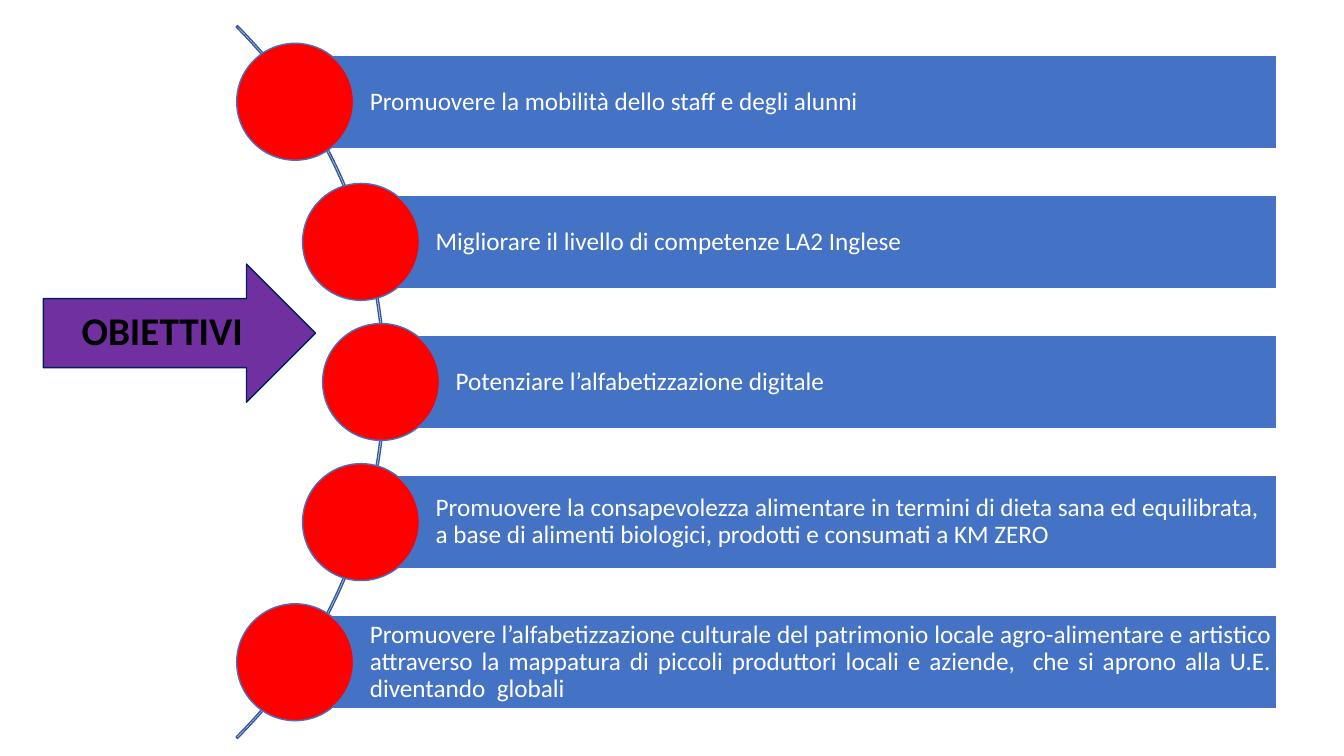
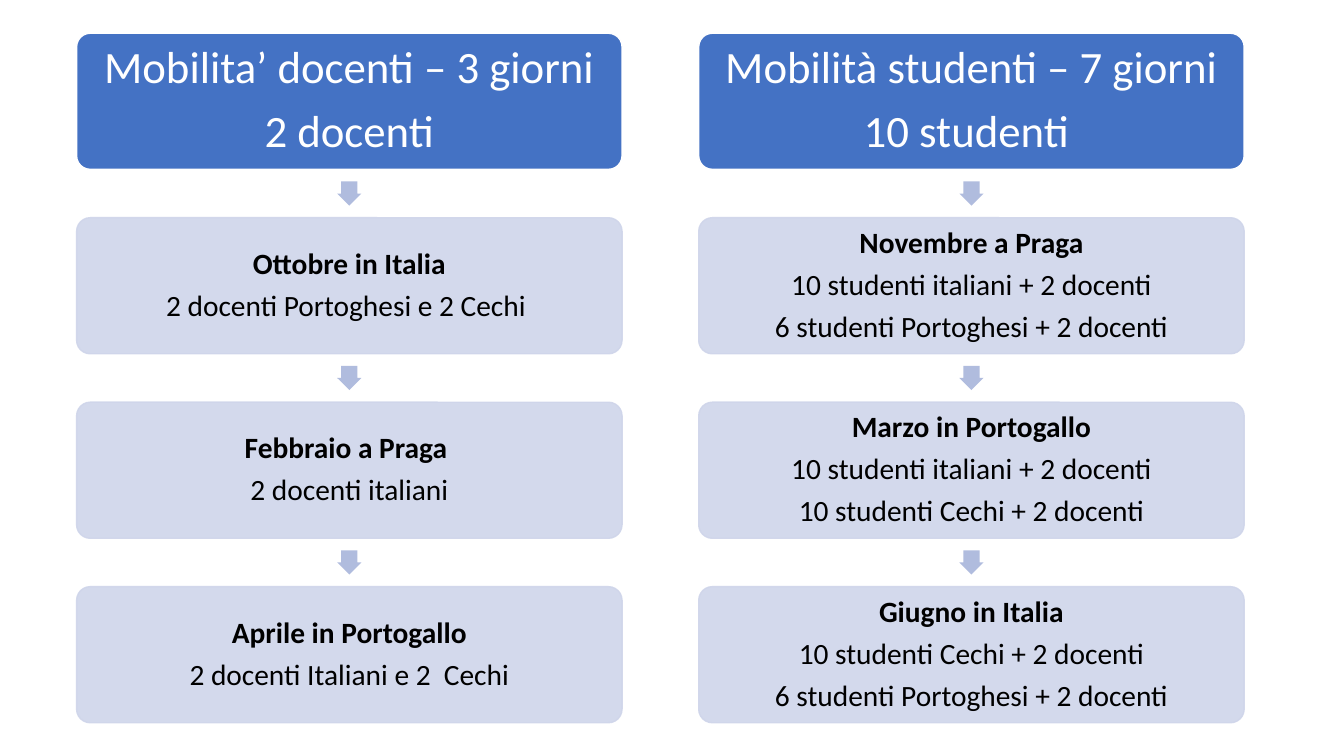
from math import sqrt

from lxml import etree
from pptx import Presentation
from pptx.dml import color as dml
from pptx.enum import shapes, text
from pptx.oxml import ns
from pptx.util import Inches, Pt

# Shared look
FONT = "Calibri"
BLUE, WHITE, BLACK = "4472C4", "FFFFFF", "000000"
RED, PURPLE, NAVY, ARC_BLUE = "FF0000", "7030A0", "002060", "365B9D"
PALE, ARROW_BLUE = "CFD5EA", "B0BCDE"
CENTER, LEFT, JUSTIFY = text.PP_ALIGN.CENTER, text.PP_ALIGN.LEFT, text.PP_ALIGN.JUSTIFY
KIND = shapes.MSO_SHAPE
WIDTH, HEIGHT = 13.33, 7.5
rgb = dml.RGBColor.from_string


def draw(slide, kind, box, fill=None, line=None, adjustments=(), opacity=100):
    shape = slide.shapes.add_shape(kind, *[Inches(length) for length in box])
    shape.shadow.inherit = False
    for index, value in enumerate(adjustments):
        shape.adjustments[index] = value
    for paint, colour in ((shape.fill, fill), (shape.line.fill, line)):
        if colour:
            paint.solid()
            paint.fore_color.rgb = rgb(colour)
        else:
            paint.background()
    if line:
        shape.line.width = Pt(1)
    if opacity < 100:
        for tag in shape.element.spPr.iter(ns.qn("a:srgbClr")):
            etree.SubElement(tag, ns.qn("a:alpha"), val=str(opacity * 1000))
    return shape


def write(shape, lines, size, colour, align=CENTER, bold_first=False, inset=0.03, left=None):
    frame = shape.text_frame
    frame.word_wrap = True
    frame.auto_size = text.MSO_AUTO_SIZE.NONE
    frame.vertical_anchor = text.MSO_ANCHOR.MIDDLE
    frame.margin_top = frame.margin_right = frame.margin_bottom = Inches(inset)
    frame.margin_left = Inches(inset if left is None else left)
    for index, line in enumerate(lines):
        paragraph = frame.paragraphs[0] if index == 0 else frame.add_paragraph()
        paragraph.alignment = align
        paragraph.line_spacing = 0.9
        paragraph.space_after = Pt(size * 0.35)
        run = paragraph.add_run()
        run.text = line
        run.font.name = FONT
        run.font.size = Pt(size)
        run.font.bold = bold_first and index == 0
        run.font.color.rgb = rgb(colour)


presentation = Presentation()
presentation.slide_width, presentation.slide_height = Inches(WIDTH), Inches(HEIGHT)
TITLE_ONLY, BLANK = presentation.slide_layouts[5], presentation.slide_layouts[6]

# Slide 1: goals along an arc
slide = presentation.slides.add_slide(TITLE_ONLY)
goals = [
    ("Promuovere la mobilità dello staff e degli alunni", LEFT),
    ("Migliorare il livello di competenze LA2 Inglese", LEFT),
    ("Potenziare l’alfabetizzazione digitale", LEFT),
    ("Promuovere la consapevolezza alimentare in termini di dieta sana ed equilibrata, "
     "a base di alimenti biologici, prodotti e consumati a KM ZERO", LEFT),
    ("Promuovere l’alfabetizzazione culturale del patrimonio locale agro-alimentare e "
     "artistico attraverso la mappatura di piccoli produttori locali e aziende,  che si "
     "aprono alla U.E. diventando  globali", JUSTIFY),
]
arc_x, arc_y, arc_radius = -1.18, 3.79, 5
centre_radius, goal_pitch = 4.96, 1.39
disc = 1.16
bar_height, bar_right = 0.8 * disc, 0.95 * WIDTH
draw(slide, KIND.BLOCK_ARC,
     (arc_x - arc_radius, arc_y - arc_radius, 2 * arc_radius, 2 * arc_radius),
     line=ARC_BLUE, adjustments=(189, 27, 0.002))

for row, (goal, align) in enumerate(goals):
    offset = (row - len(goals) // 2) * goal_pitch
    x, y = arc_x + sqrt(centre_radius ** 2 - offset ** 2), arc_y + offset
    bar = draw(slide, KIND.RECTANGLE, (x, y - bar_height / 2, bar_right - x, bar_height),
               BLUE, WHITE)
    write(bar, [goal], 18, WHITE, align, inset=0.05, left=0.74)
    draw(slide, KIND.OVAL, (x - disc / 2, y - disc / 2, disc, disc), RED, BLUE)

# Title on the arrow's shaft, in front of the arrow
arrow_left, arrow_top, arrow_width, arrow_height = 0.43, 2.62, 2.7, 1.37
draw(slide, KIND.RIGHT_ARROW, (arrow_left, arrow_top, arrow_width, arrow_height), PURPLE, NAVY)
title = slide.shapes.title
title.left, title.top = Inches(arrow_left), Inches(arrow_top + arrow_height / 4)
title.width, title.height = Inches(arrow_width - arrow_height / 4), Inches(arrow_height / 2)
write(title, ["OBIETTIVI"], 28, BLACK, bold_first=True)
slide.shapes.element.append(title.element)

# Slide 2: two columns of mobility steps
slide = presentation.slides.add_slide(BLANK)
columns = [
    [["Mobilita’ docenti – 3 giorni", "2 docenti"],
     ["Ottobre in Italia", "2 docenti Portoghesi e 2 Cechi "],
     ["Febbraio a Praga ", "2 docenti italiani"],
     ["Aprile in Portogallo", "2 docenti Italiani e 2  Cechi"]],
    [["Mobilità studenti – 7 giorni", "10 studenti "],
     ["Novembre a Praga", "10 studenti italiani + 2 docenti",
      "6 studenti Portoghesi + 2 docenti"],
     ["Marzo in Portogallo", "10 studenti italiani + 2 docenti",
      "10 studenti Cechi + 2 docenti"],
     ["Giugno in Italia", "10 studenti Cechi + 2 docenti",
      "6 studenti Portoghesi + 2 docenti"]],
]
grid_left, grid_top, column_pitch, row_pitch = 0.76, 0.33, 6.17, 1.83
card_width, card_height, arrow_size = 5.41, 1.35, 0.24
arrow_gap = (row_pitch - card_height - arrow_size) / 2

for column, steps in enumerate(columns):
    left = grid_left + column * column_pitch
    for row, lines in enumerate(steps):
        top = grid_top + row * row_pitch
        box = (left, top, card_width, card_height)
        if row == 0:
            card = draw(slide, KIND.ROUNDED_RECTANGLE, box, BLUE, WHITE, [0.1])
            write(card, lines, 32, WHITE, inset=0.04)
        else:
            draw(slide, KIND.DOWN_ARROW,
                 (left + (card_width - arrow_size) / 2, top - arrow_gap - arrow_size,
                  arrow_size, arrow_size), ARROW_BLUE, adjustments=(0.67, 0.5))
            card = draw(slide, KIND.ROUNDED_RECTANGLE, box, PALE, PALE, [0.1], opacity=90)
            write(card, lines, 21, BLACK, bold_first=True)

presentation.save("out.pptx")
